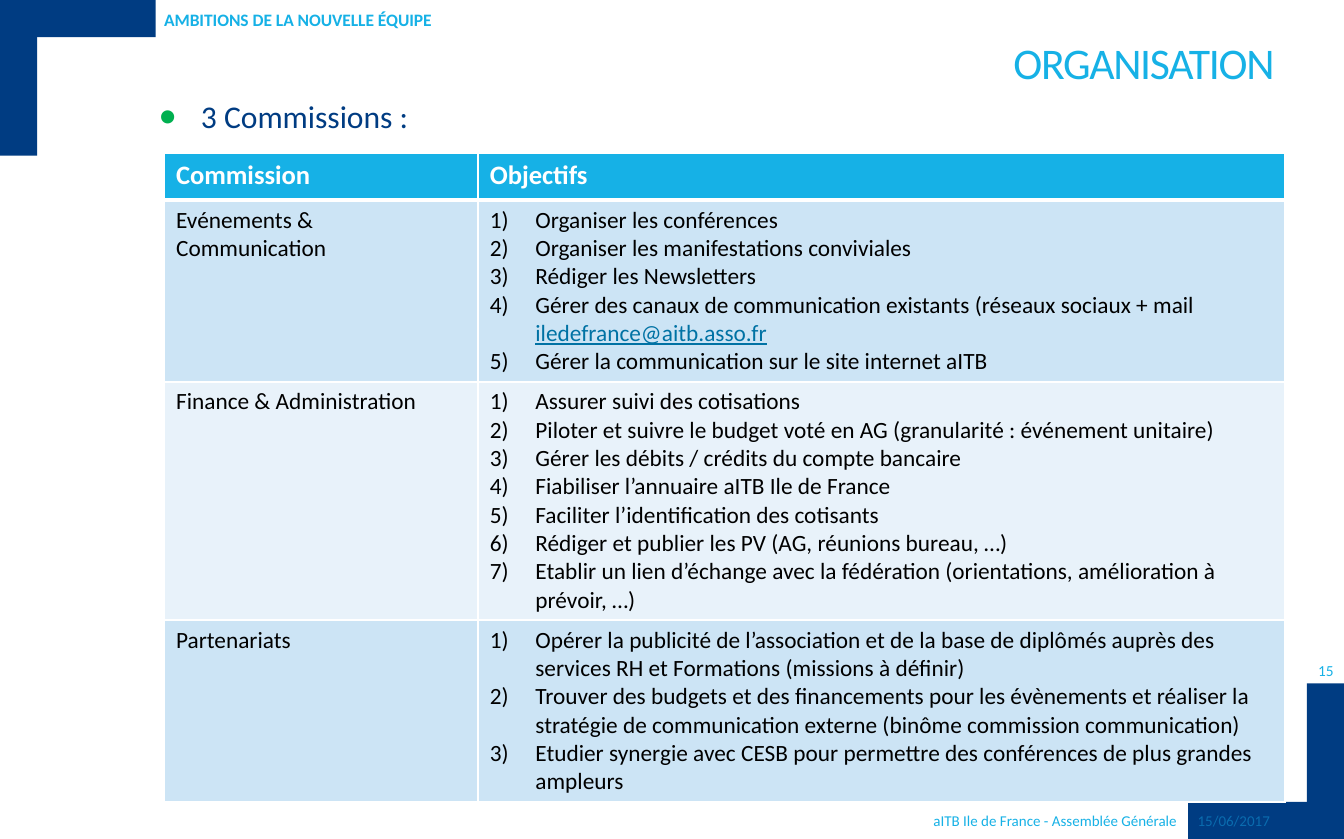
from lxml.etree import SubElement
from pptx import Presentation
from pptx.dml.color import RGBColor
from pptx.enum.shapes import MSO_SHAPE
from pptx.enum.text import MSO_ANCHOR, PP_ALIGN
from pptx.oxml import parse_xml
from pptx.oxml.ns import nsdecls, qn
from pptx.util import Inches, Pt

WHITE = RGBColor(0xFF, 0xFF, 0xFF)
BLACK = RGBColor(0x00, 0x00, 0x00)
NAVY = RGBColor(0x00, 0x3C, 0x82)
CYAN = RGBColor(0x16, 0xB1, 0xE6)
BLUE = RGBColor(0x0A, 0x6C, 0xAF)
GREEN = RGBColor(0x00, 0xB0, 0x50)
LINK = RGBColor(0x00, 0x72, 0xA4)
BAND_DARK = RGBColor(0xCC, 0xE4, 0xF5)
BAND_LIGHT = RGBColor(0xE8, 0xF2, 0xFA)

CM_PER_INCH = 2.54
WIDTH, HEIGHT = 28.5 / CM_PER_INCH, 17.8 / CM_PER_INCH
ARM, THICK = 1.3, 0.31
ADDRESS = "iledefrance@aitb.asso.fr"
HEADINGS = ["Commission", "Objectifs"]
COMMISSIONS = [
    ("Evénements & Communication", 1.52, [
        "Organiser les conférences",
        "Organiser les manifestations conviviales",
        "Rédiger les Newsletters",
        "Gérer des canaux de communication existants (réseaux sociaux + mail " + ADDRESS,
        "Gérer la communication sur le site internet aITB",
    ]),
    ("Finance & Administration", 1.99, [
        "Assurer suivi des cotisations",
        "Piloter et suivre le budget voté en AG (granularité : événement unitaire)",
        "Gérer les débits / crédits du compte bancaire",
        "Fiabiliser l’annuaire aITB Ile de France",
        "Faciliter l’identification des cotisants",
        "Rédiger et publier les PV (AG, réunions bureau, …)",
        "Etablir un lien d’échange avec la fédération (orientations, amélioration à prévoir, …)",
    ]),
    ("Partenariats", 1.52, [
        "Opérer la publicité de l’association et de la base de diplômés auprès des "
        "services RH et Formations (missions à définir)",
        "Trouver des budgets et des financements pour les évènements et réaliser la "
        "stratégie de communication externe (binôme commission communication)",
        "Etudier synergie avec CESB pour permettre des conférences de plus grandes ampleurs",
    ]),
]


def apply(target, values):
    for name, value in values.items():
        setattr(target, name, value)


def add_span(para, text, size, color, **extra):
    span = para.add_run()
    span.text = text
    apply(span.font, {"name": "Calibri", "size": Pt(size), **extra})
    span.font.color.rgb = color
    return span


def set_indent(para, indent):
    properties = para._p.get_or_add_pPr()
    properties.set("marL", str(Inches(indent)))
    properties.set("indent", str(-Inches(indent)))
    return properties


def add_text(page, box, text, size, color, align=PP_ALIGN.LEFT, frame_format=None, **extra):
    frame = page.shapes.add_textbox(*map(Inches, box)).text_frame
    apply(frame, {"word_wrap": True, **(frame_format or {})})
    para = frame.paragraphs[0]
    para.alignment = align
    add_span(para, text, size, color, **extra)
    return para


def add_corner(page, box, at_end):
    left, top, width, height = box
    shift = 1 if at_end else 0
    bars = [
        (left, top + shift * (height - THICK), width, THICK),
        (left + shift * (width - THICK), top, THICK, height),
    ]
    for bar_box in bars:
        bar = page.shapes.add_shape(MSO_SHAPE.RECTANGLE, *map(Inches, bar_box))
        bar.shadow.inherit = False
        bar.fill.solid()
        bar.fill.fore_color.rgb = NAVY
        bar.line.fill.background()


def add_title(page, box):
    title = page.shapes.title
    apply(title, dict(zip(("left", "top", "width", "height"), map(Inches, box))))
    apply(title.text_frame, {
        "margin_left": Inches(0.2), "margin_right": Inches(0.09),
        "margin_top": Inches(0.05), "margin_bottom": 0,
        "vertical_anchor": MSO_ANCHOR.TOP, "word_wrap": True,
    })
    para = title.text_frame.paragraphs[0]
    apply(para, {"alignment": PP_ALIGN.RIGHT, "line_spacing": Pt(24)})
    span = add_span(para, "ORGANISATION", 26.3, CYAN)
    span.font._element.set("spc", "-80")


def add_lead(page, box):
    para = add_text(page, box, "3 Commissions :", 19, NAVY)
    properties = set_indent(para, 0.35)
    color = SubElement(properties, qn("a:buClr"))
    SubElement(color, qn("a:srgbClr"), val=str(GREEN))
    SubElement(properties, qn("a:buSzPct"), val="90000")
    SubElement(properties, qn("a:buFont"), typeface="Calibri")
    SubElement(properties, qn("a:buChar"), char="●")


def style_cell(cell, fill, top=1, bottom=1):
    cell.fill.solid()
    cell.fill.fore_color.rgb = fill
    properties = cell._tc.get_or_add_tcPr()
    borders = {"lnL": 1, "lnR": 1, "lnT": top, "lnB": bottom}
    for index, (side, points) in enumerate(borders.items()):
        properties.insert(index, parse_xml(
            f'<a:{side} {nsdecls("a")} w="{Pt(points)}"><a:solidFill>'
            f'<a:srgbClr val="{WHITE}"/></a:solidFill></a:{side}>'))


def add_goals(cell, goals):
    frame = cell.text_frame
    for index, goal in enumerate(goals):
        para = frame.add_paragraph() if index else frame.paragraphs[0]
        properties = set_indent(para, 0.38)
        SubElement(properties, qn("a:buFont"), typeface="+mj-lt")
        SubElement(properties, qn("a:buAutoNum"), type="arabicParenR")
        wording, address, _ = goal.partition(ADDRESS)
        add_span(para, wording, 14, BLACK)
        if address:
            add_span(para, address, 14, LINK, underline=True)


def add_commissions(page, box):
    rows = len(COMMISSIONS) + 1
    table = page.shapes.add_table(rows, 2, *map(Inches, box)).table
    table.columns[0].width = Inches(2.62)
    table.columns[1].width = Inches(box[2] - 2.62)
    table.rows[0].height = Inches(0.39)
    for column, heading in enumerate(HEADINGS):
        cell = table.cell(0, column)
        style_cell(cell, CYAN, bottom=3)
        add_span(cell.text_frame.paragraphs[0], heading, 16, WHITE, bold=True)
    for row, (name, height, goals) in enumerate(COMMISSIONS, 1):
        table.rows[row].height = Inches(height)
        for column in range(2):
            style_cell(table.cell(row, column), BAND_DARK if row % 2 else BAND_LIGHT,
                       top=3 if row == 1 else 1)
        add_span(table.cell(row, 0).text_frame.paragraphs[0], name, 14, BLACK)
        add_goals(table.cell(row, 1), goals)


def add_footer(page, box):
    left, top, width, height = box
    date_width = 1.31
    add_text(page, (left, top, 7.62, height),
             "aITB Ile de France - Assemblée Générale", 9, CYAN, PP_ALIGN.RIGHT)
    add_text(page, (left + width - date_width, top, date_width, height),
             "15/06/2017", 9, BLUE)


def main():
    deck = Presentation()
    deck.slide_width = Inches(WIDTH)
    deck.slide_height = Inches(HEIGHT)
    deck.element.sldSz.attrib.pop("type", None)
    page = deck.slides.add_slide(deck.slide_layouts[5])
    add_corner(page, (WIDTH - ARM, HEIGHT - ARM, ARM, ARM), True)
    add_corner(page, (0, 0, ARM, ARM), False)
    add_title(page, (0.76, 0.35, 9.97, 0.84))
    add_footer(page, (2.3, 6.73, 8.91, 0.23))
    add_lead(page, (1.23, 0.76, 9.5, 5.74))
    add_text(page, (1.37, 0.03, 3.92, 0.26), "AMBITIONS DE LA NOUVELLE ÉQUIPE", 10.5, CYAN,
             frame_format={"margin_left": 0, "vertical_anchor": MSO_ANCHOR.MIDDLE}, bold=True)
    add_commissions(page, (1.37, 1.28, 9.36, 5.42))
    no_margins = dict.fromkeys(("margin_left", "margin_right", "margin_top", "margin_bottom"), 0)
    add_text(page, (10.92, 5.49, 0.3, 0.22), "15", 9.2, CYAN, PP_ALIGN.CENTER,
             {**no_margins, "vertical_anchor": MSO_ANCHOR.MIDDLE})
    deck.save("out.pptx")


if __name__ == "__main__":
    main()
